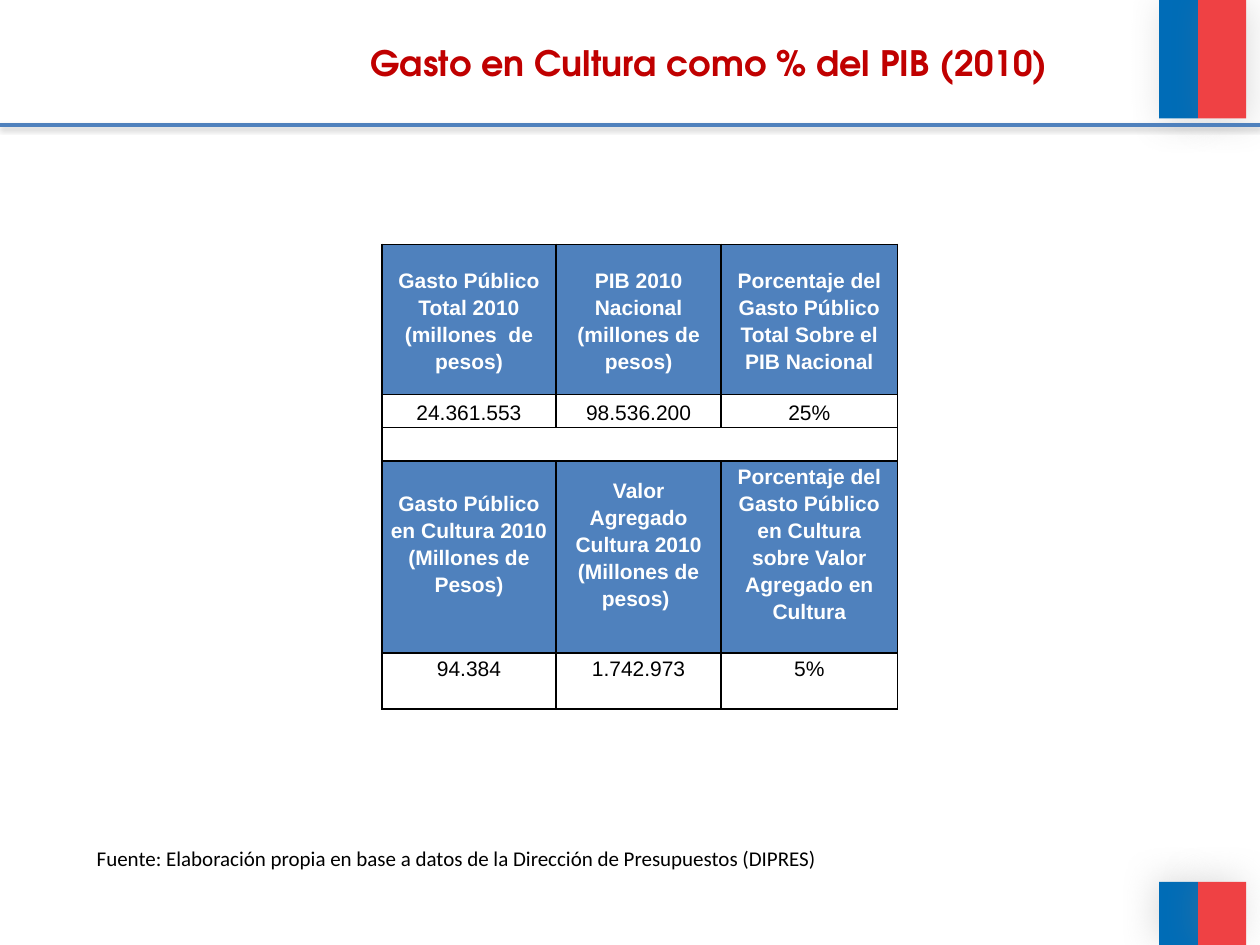
"""Build the slide on culture spending as a share of GDP."""
from pptx import Presentation, oxml
from pptx.dml.color import RGBColor
from pptx.enum import shapes, text
from pptx.oxml import ns
from pptx.util import Pt

BLUE = RGBColor(0x00, 0x6C, 0xB7)
RED = RGBColor(0xEF, 0x41, 0x44)
HEAD = RGBColor(0x4F, 0x81, 0xBD)
TITLE = RGBColor(0xC0, 0x00, 0x00)
BLACK = RGBColor(0, 0, 0)
WHITE = RGBColor(255, 255, 255)

BANDS = [(662.4, 22.3, BLUE), (684.7, 27.4, RED)]
FLAGS = [(0, 67.7, 45), (504, 36, 215)]
RULE_Y = 71.3
TEXTS = [
    ("Gasto en Cultura como % del PIB (2010)", (204.7, 20.2, 407, 31.7),
     {"name": "TeX Gyre Adventor", "size": Pt(20), "bold": True}, TITLE),
    ("Fuente: Elaboración propia en base a datos de la Dirección de Presupuestos (DIPRES)",
     (48.2, 479.5, 607, 21.6), {"name": "Calibri", "size": Pt(12), "bold": False}, BLACK),
]
TABLE_AT = (218.2, 139.7)
COLS = [99.6, 94.3, 100.8]
ROWS = [
    (85.7, 0, True, ["Gasto Público Total 2010 (millones  de pesos)",
                     "PIB 2010 Nacional (millones de pesos)",
                     "Porcentaje del Gasto Público Total Sobre el PIB Nacional"]),
    (19, 0, False, ["24.361.553", "98.536.200", "25%"]),
    (19, 0, False, []),
    (109.7, 15.6, True, ["Gasto Público en Cultura 2010 (Millones de Pesos)",
                         "Valor Agregado Cultura 2010 (Millones de pesos) ",
                         "Porcentaje del Gasto Público en Cultura sobre Valor Agregado en Cultura"]),
    (32, 15.6, False, ["94.384", "1.742.973", "5%"]),
]


def apply(obj, values):
    for key, value in values.items():
        setattr(obj, key, value)


def add_shadow(s, alpha, blur, dist, angle):
    s._element.spPr.append(oxml.parse_xml(
        f'<a:effectLst {ns.nsdecls("a")}><a:outerShdw blurRad="{Pt(blur)}" dist="{Pt(dist)}" '
        f'dir="{angle * 60000}" rotWithShape="0"><a:srgbClr val="808080">'
        f'<a:alpha val="{alpha * 1000}"/></a:srgbClr></a:outerShdw></a:effectLst>'))


def add_borders(cell):
    tc_pr = cell._tc.get_or_add_tcPr()
    for side in "LRTB":
        tc_pr.append(oxml.parse_xml(
            f'<a:ln{side} {ns.nsdecls("a")} w="{Pt(1)}"><a:solidFill>'
            f'<a:srgbClr val="{BLACK}"/></a:solidFill></a:ln{side}>'))


def fill_cell(cell, words, bottom, is_head):
    add_borders(cell)
    apply(cell, {"margin_left": Pt(3.6), "margin_right": Pt(3.6), "margin_top": 0,
                 "margin_bottom": Pt(bottom), "vertical_anchor": text.MSO_ANCHOR.MIDDLE})
    cell.fill.solid()
    cell.fill.fore_color.rgb = HEAD if is_head else WHITE
    p = cell.text_frame.paragraphs[0]
    apply(p, {"alignment": text.PP_ALIGN.CENTER, "line_spacing": 1.15})
    p.font.size = Pt(12)
    if words:
        r = p.add_run()
        r.text = words
        apply(r.font, {"name": "Arial", "size": Pt(12), "bold": is_head})
        r.font.color.rgb = WHITE if is_head else BLACK


def add_table(slide):
    size = (sum(COLS), sum(row[0] for row in ROWS))
    table = slide.shapes.add_table(len(ROWS), len(COLS), *map(Pt, TABLE_AT + size)).table
    for column, width in zip(table.columns, COLS):
        column.width = Pt(width)
    for i, (height, bottom, is_head, words) in enumerate(ROWS):
        table.rows[i].height = Pt(height)
        for j in range(len(COLS)):
            fill_cell(table.cell(i, j), words[j] if words else "", bottom, is_head)
        if not words:
            table.cell(i, 0).merge(table.cell(i, len(COLS) - 1))


def main():
    prs = Presentation()
    apply(prs, {"slide_width": Pt(720), "slide_height": Pt(540)})
    slide = prs.slides.add_slide(prs.slide_layouts[6])
    for top, height, angle in FLAGS:
        for left, width, color in BANDS:
            s = slide.shapes.add_shape(shapes.MSO_SHAPE.RECTANGLE,
                                       *map(Pt, (left, top, width, height)))
            s.fill.solid()
            s.fill.fore_color.rgb = color
            s.line.fill.background()
            add_shadow(s, 25, 20, 3, angle)
    add_table(slide)
    rule = slide.shapes.add_connector(shapes.MSO_CONNECTOR.STRAIGHT,
                                      *map(Pt, (0, RULE_Y, 720, RULE_Y)))
    rule.line.color.rgb = HEAD
    rule.line.width = Pt(2)
    add_shadow(rule, 38, 3.1, 1.6, 90)
    for words, box, font, color in TEXTS:
        tf = slide.shapes.add_textbox(*map(Pt, box)).text_frame
        tf.word_wrap = True
        r = tf.paragraphs[0].add_run()
        r.text = words
        apply(r.font, font)
        r.font.color.rgb = color
    prs.save("out.pptx")


if __name__ == "__main__":
    main()
